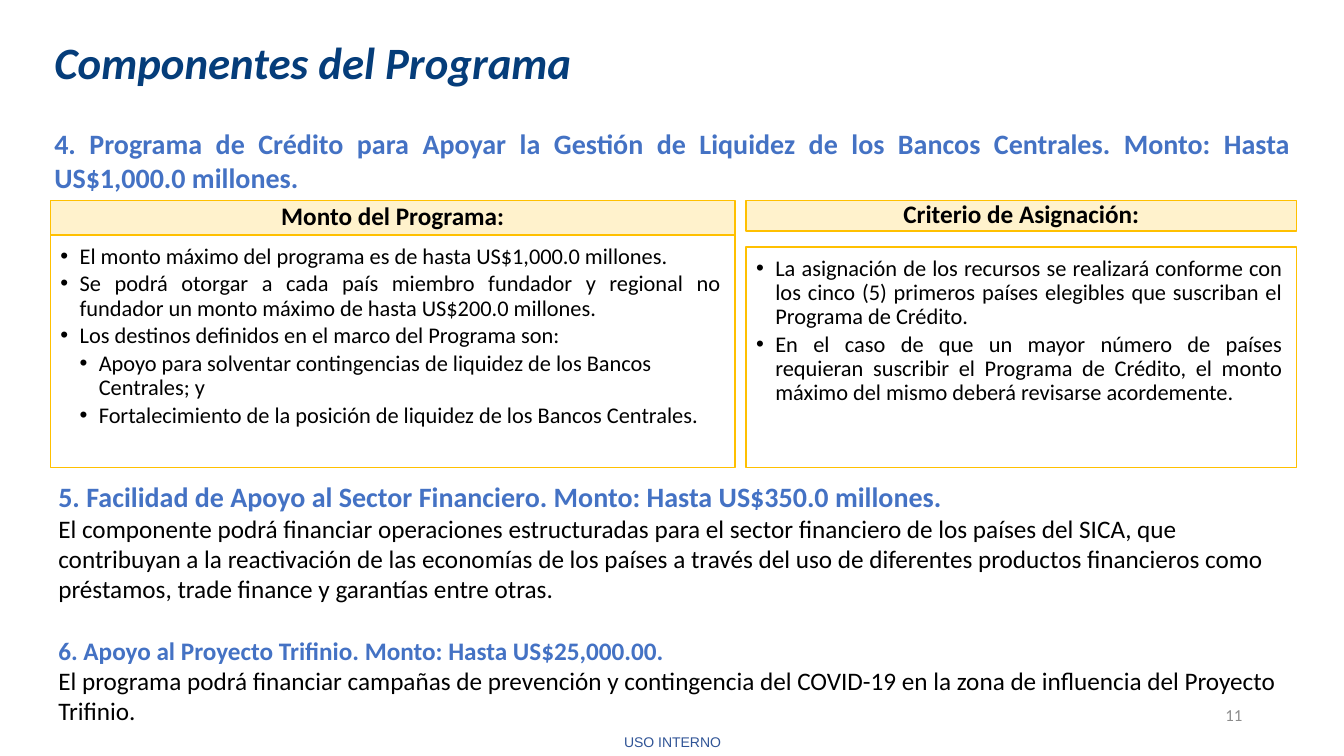
import pptx
import pptx.dml.color
import pptx.enum.text
import pptx.util
from lxml import etree
from pptx.oxml.ns import qn

Inches, Pt = pptx.util.Inches, pptx.util.Pt
ALIGN, ANCHOR = pptx.enum.text.PP_ALIGN, pptx.enum.text.MSO_ANCHOR

NAVY, BLUE, BLACK, GRAY = "053D7A", "4472C4", "000000", "8C8C8C"
FOOTER_BLUE, GOLD, CREAM = "305496", "FFC000", "FFF2CC"

TITLE = "Componentes del Programa"
CREDIT = ("4. Programa de Crédito para Apoyar la Gestión de Liquidez de los Bancos "
          "Centrales. Monto: Hasta US$1,000.0 millones.")
# Each panel: heading, left, width, heading height, list top, (level, alignment, text)
PANEL_TOP, PANEL_BOTTOM = 1.99, 4.64
PANELS = [
    ("Monto del Programa:", 0.5, 6.79, 0.34, 2.33, [
        (0, ALIGN.JUSTIFY, "El monto máximo del programa es de hasta US$1,000.0 millones."),
        (0, ALIGN.JUSTIFY, "Se podrá otorgar a cada país miembro fundador y regional no "
                           "fundador un monto máximo de hasta US$200.0 millones."),
        (0, ALIGN.LEFT, "Los destinos definidos en el marco del Programa son:"),
        (1, ALIGN.LEFT, "Apoyo para solventar contingencias de liquidez de los Bancos "
                        "Centrales; y"),
        (1, ALIGN.LEFT, "Fortalecimiento de la posición de liquidez de los Bancos "
                        "Centrales."),
    ]),
    ("Criterio de Asignación:", 7.4, 5.46, 0.3, 2.45, [
        (0, ALIGN.JUSTIFY, "La asignación de los recursos se realizará conforme con los "
                           "cinco (5) primeros países elegibles que suscriban el Programa "
                           "de Crédito."),
        (0, ALIGN.JUSTIFY, "En el caso de que un mayor número de países requieran "
                           "suscribir el Programa de Crédito, el monto máximo del mismo "
                           "deberá revisarse acordemente."),
    ]),
]
# Text, size, colour, bold, space before
OTHER_COMPONENTS = [
    ("5. Facilidad de Apoyo al Sector Financiero. Monto: Hasta US$350.0 millones.",
     20, BLUE, True, 0),
    ("El componente podrá financiar operaciones estructuradas para el sector financiero "
     "de los países del SICA, que contribuyan a la reactivación de las economías de los "
     "países a través del uso de diferentes productos financieros como préstamos, trade "
     "finance y garantías entre otras.", 18, BLACK, False, 0),
    ("6. Apoyo al Proyecto Trifinio. Monto: Hasta US$25,000.00.", 18, BLUE, True, 22),
    ("El programa podrá financiar campañas de prevención y contingencia del COVID-19 en "
     "la zona de influencia del Proyecto Trifinio.", 18, BLACK, False, 0),
]
INDENT = 0.19


def rgb(color):
    return pptx.dml.color.RGBColor.from_string(color)


def place(shape, left, top, width, height):
    shape.left, shape.top = Inches(left), Inches(top)
    shape.width, shape.height = Inches(width), Inches(height)


def set_frame(shape, anchor, insets=(0.1, 0.05, 0.1, 0.05)):
    frame = shape.text_frame
    frame.word_wrap = True
    frame.auto_size = pptx.enum.text.MSO_AUTO_SIZE.NONE
    frame.vertical_anchor = anchor
    (frame.margin_left, frame.margin_top,
     frame.margin_right, frame.margin_bottom) = map(Inches, insets)
    return frame


def style(paragraph, size, color, bold=False, align=ALIGN.LEFT, font="Calibri",
          italic=False, line=1.0, before=0, after=0):
    paragraph.alignment = align
    paragraph.line_spacing = line
    paragraph.space_before, paragraph.space_after = Pt(before), Pt(after)
    for run in paragraph.runs:
        run.font.name, run.font.size = font, Pt(size)
        run.font.bold, run.font.italic = bold, italic
        run.font.color.rgb = rgb(color)


def add_bullet(paragraph, level):
    paragraph.level = level
    properties = paragraph._p.get_or_add_pPr()
    properties.set("marL", str(Inches(INDENT * (level + 1))))
    properties.set("indent", str(-Inches(INDENT)))
    etree.SubElement(properties, qn("a:buFont"), typeface="Arial")
    etree.SubElement(properties, qn("a:buChar"), char="•")


def outline(shape):
    shape.line.color.rgb = rgb(GOLD)
    shape.line.width = Pt(1)


def add_text(slide, box, text, anchor=ANCHOR.TOP, **look):
    label = slide.shapes.add_textbox(*map(Inches, box))
    frame = set_frame(label, anchor)
    frame.text = text
    style(frame.paragraphs[0], **look)


def fill_panel(heading, points, panel):
    """Fill a heading placeholder and the list placeholder beneath it."""
    name, left, width, heading_height, list_top, items = panel
    place(heading, left, PANEL_TOP, width, heading_height)
    heading.fill.solid()
    heading.fill.fore_color.rgb = rgb(CREAM)
    outline(heading)
    frame = set_frame(heading, ANCHOR.MIDDLE, (0.14, 0.08, 0.14, 0.08))
    frame.text = name
    style(frame.paragraphs[0], 18, BLACK, True, ALIGN.CENTER, line=0.9)

    place(points, left, list_top, width, PANEL_BOTTOM - list_top)
    outline(points)
    frame = set_frame(points, ANCHOR.TOP, (0.1, 0.1, 0.14, 0.16))
    frame.text = "\n".join(text for _, _, text in items)
    for paragraph, (level, align, _) in zip(frame.paragraphs, items):
        add_bullet(paragraph, level)
        style(paragraph, 16, BLACK, align=align, line=0.9, after=2.5)


def main():
    deck = pptx.Presentation()
    deck.slide_width, deck.slide_height = Inches(13.33), Inches(7.5)
    comparison = deck.slide_layouts.get_by_name("Comparison")
    slide = deck.slides.add_slide(comparison)

    title = slide.shapes.title
    place(title, 0.44, 0.35, 10.11, 0.97)
    frame = set_frame(title, ANCHOR.TOP)
    frame.text = TITLE
    style(frame.paragraphs[0], 32, NAVY, True, italic=True, line=0.9)

    add_text(slide, (0.44, 1.21, 12.46, 0.77), CREDIT,
             size=20, color=BLUE, bold=True, align=ALIGN.JUSTIFY)

    for number, panel in enumerate(PANELS):
        heading, points = (slide.placeholders[2 * number + 1],
                           slide.placeholders[2 * number + 2])
        fill_panel(heading, points, panel)

    others = slide.shapes.add_textbox(*map(Inches, (0.48, 4.71, 12.38, 2.56)))
    frame = set_frame(others, ANCHOR.TOP)
    frame.text = "\n".join(component[0] for component in OTHER_COMPONENTS)
    for paragraph, (_, size, color, bold, before) in zip(frame.paragraphs, OTHER_COMPONENTS):
        style(paragraph, size, color, bold, before=before)

    add_text(slide, (9.42, 6.89, 3, 0.4), "11", ANCHOR.MIDDLE,
             size=12, color=GRAY, align=ALIGN.RIGHT)
    add_text(slide, (0.14, 7.23, 13.06, 0.27), "USO INTERNO",
             size=10, color=FOOTER_BLUE, align=ALIGN.CENTER, font="Arial")

    deck.save("out.pptx")


if __name__ == "__main__":
    main()
